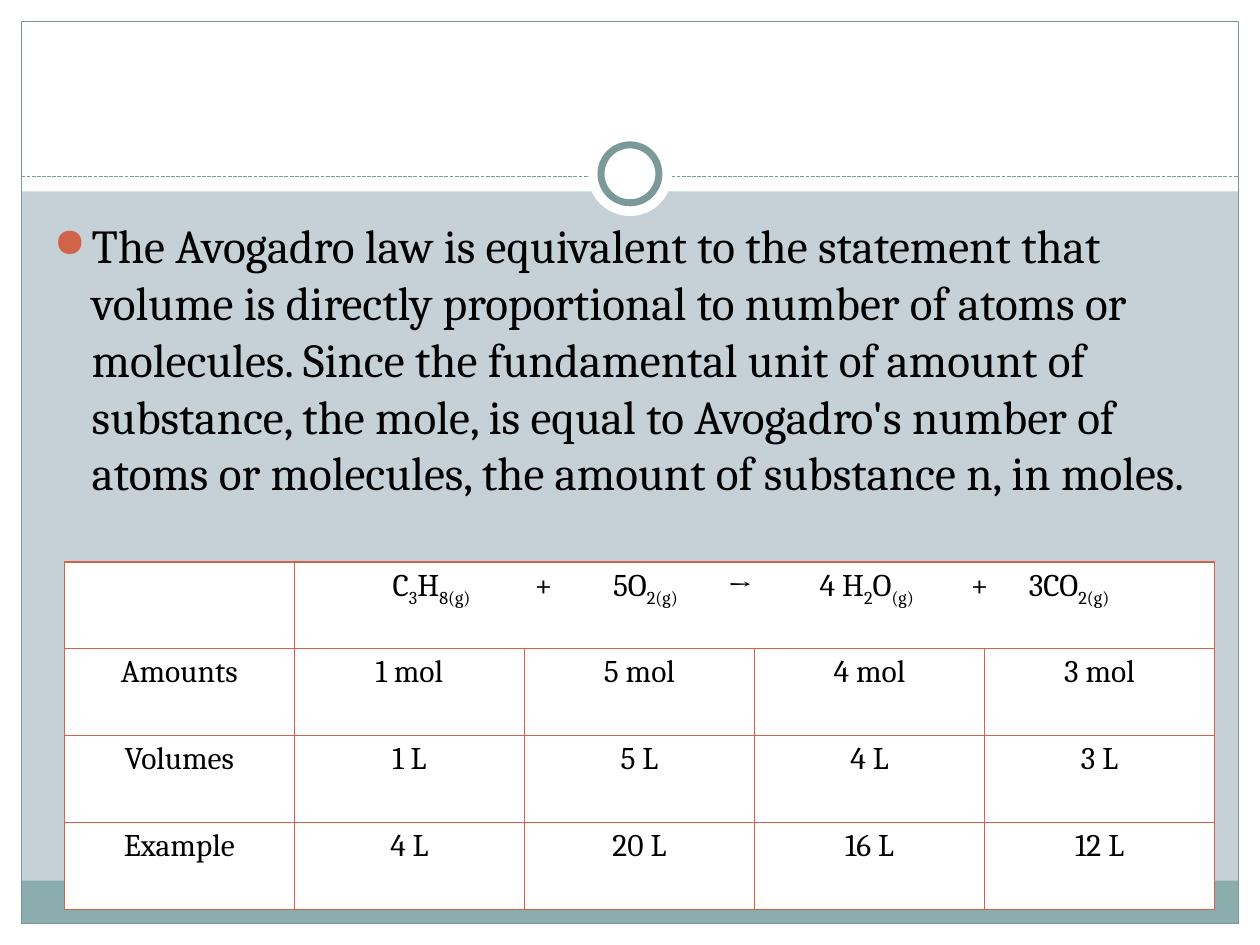
from dataclasses import dataclass

from lxml import etree
from pptx import Presentation
from pptx.dml.color import RGBColor
from pptx.enum.dml import MSO_LINE
from pptx.enum.shapes import MSO_CONNECTOR, MSO_SHAPE
from pptx.enum.text import PP_ALIGN
from pptx.oxml.ns import qn
from pptx.util import Inches, Pt

RECT, OVAL = MSO_SHAPE.RECTANGLE, MSO_SHAPE.OVAL
STRAIGHT = MSO_CONNECTOR.STRAIGHT
DASH = MSO_LINE.SQUARE_DOT
CENTER, LEFT = PP_ALIGN.CENTER, PP_ALIGN.LEFT


@dataclass(frozen=True)
class Theme:
    background: str = "C5D1D7"
    paper: str = "FFFFFF"
    band: str = "8CADAE"
    frame: str = "7C999A"
    accent: str = "D16349"
    ink: str = "000000"
    font: str = "Cambria"
    body_size: int = 27
    table_size: int = 18
    hairline: float = 0.75
    ring_line: float = 4


THEME = Theme()

STATEMENT = (
    "The Avogadro law is equivalent to the statement that volume is directly "
    "proportional to number of atoms or molecules. Since the fundamental unit "
    "of amount of substance, the mole, is equal to Avogadro's number of atoms "
    "or molecules, the amount of substance n, in moles."
)
# Each term: tab stop in inches, then alternating normal and subscript text
EQUATION = [
    (0.71, ["C", "3", "H", "8(g)"]),
    (1.84, ["+"]),
    (2.46, ["5O", "2(g)"]),
    (3.37, ["→"]),
    (4.10, ["4 H", "2", "O", "(g)"]),
    (5.30, ["+"]),
    (5.76, ["3CO", "2(g)"]),
]
QUANTITIES = [
    ["Amounts", "1 mol", "5 mol", "4 mol", "3 mol"],
    ["Volumes", "1 L", "5 L", "4 L", "3 L"],
    ["Example", "4 L", "20 L", "16 L", "12 L"],
]


def color(value):
    return RGBColor.from_string(value)


def add_plain(slide, kind, box, fill=None, line=None, weight=THEME.hairline):
    shape = slide.shapes.add_shape(kind, *map(Inches, box))
    shape.shadow.inherit = False
    if fill:
        shape.fill.solid()
        shape.fill.fore_color.rgb = color(fill)
    else:
        shape.fill.background()
    if line:
        shape.line.color.rgb = color(line)
        shape.line.width = Pt(weight)
    else:
        shape.line.fill.background()


def set_font(paragraph, size):
    font = paragraph.font
    font.name, font.size = THEME.font, Pt(size)
    font.color.rgb = color(THEME.ink)


def add_backdrop(slide, box):
    left, top, width, height = box
    margin, header = 0.17, 1.52
    right, bottom = left + width, top + height
    slide.background.fill.solid()
    slide.background.fill.fore_color.rgb = color(THEME.background)

    # White header and margins
    for edge in [
        (left, bottom - margin, width, margin),
        (left, top, width, header),
        (left, top, margin, height),
        (right - margin, top, margin, height),
    ]:
        add_plain(slide, RECT, edge, THEME.paper)

    # Footer band and frame
    inner = width - 2 * margin
    add_plain(slide, RECT, (left + margin, 6.99, inner, 0.34), THEME.band)
    add_plain(slide, RECT, (left + margin, top + margin, inner, height - 2 * margin),
              line=THEME.frame)

    # Dashed divider
    divider = slide.shapes.add_connector(
        STRAIGHT, Inches(left + margin), Inches(1.4), Inches(right - margin), Inches(1.4))
    divider.line.color.rgb = color(THEME.frame)
    divider.line.width = Pt(THEME.hairline)
    divider.line.dash_style = DASH
    etree.SubElement(divider.element.spPr, qn("a:effectLst"))

    # Ring with a white halo
    center_x, center_y = left + width / 2, 1.38
    for diameter, line in [(0.67, None), (0.46, THEME.frame)]:
        ring = (center_x - diameter / 2, center_y - diameter / 2, diameter, diameter)
        add_plain(slide, OVAL, ring, THEME.paper, line, THEME.ring_line)


def add_statement(slide, box):
    frame = slide.shapes.add_textbox(*map(Inches, box)).text_frame
    frame.word_wrap = True
    statement = frame.paragraphs[0]
    statement.text = STATEMENT
    statement.space_before = Pt(0.2 * THEME.body_size)
    set_font(statement, THEME.body_size)

    # Bullet goes ahead of the default run properties
    props = statement._p.get_or_add_pPr()
    props.set("marL", str(Inches(0.3)))
    props.set("indent", str(-Inches(0.3)))
    bullet_color = etree.Element(qn("a:buClr"))
    etree.SubElement(bullet_color, qn("a:srgbClr"), val=THEME.accent)
    bullet_size = etree.Element(qn("a:buSzPct"), val="85000")
    bullet = etree.Element(qn("a:buChar"), char="●")
    defaults = props.find(qn("a:defRPr"))
    for part in (bullet_color, bullet_size, bullet):
        defaults.addprevious(part)


def style_cell(cell):
    cell.margin_left = cell.margin_right = Inches(0.07)
    cell.margin_top = cell.margin_bottom = 0
    props = cell._tc.get_or_add_tcPr()
    for side in ("a:lnL", "a:lnR", "a:lnT", "a:lnB"):
        border = etree.SubElement(props, qn(side), w=str(Pt(THEME.hairline)))
        fill = etree.SubElement(border, qn("a:solidFill"))
        etree.SubElement(fill, qn("a:srgbClr"), val=THEME.accent)
    cell.fill.solid()
    cell.fill.fore_color.rgb = color(THEME.paper)
    paragraph = cell.text_frame.paragraphs[0]
    paragraph.alignment = CENTER
    paragraph.line_spacing = 1.15
    set_font(paragraph, THEME.table_size)


def write_equation(paragraph):
    paragraph.alignment = LEFT
    tabs = etree.Element(qn("a:tabLst"))
    for stop, parts in EQUATION:
        etree.SubElement(tabs, qn("a:tab"), pos=str(Inches(stop)), algn="l")
        for index, part in enumerate(parts):
            run = paragraph.add_run()
            run.text = part if index else "\t" + part
            if index % 2:
                run.font._element.set("baseline", "-25000")
    paragraph._p.get_or_add_pPr().find(qn("a:defRPr")).addprevious(tabs)


def add_quantities(slide, box):
    rows, columns = len(QUANTITIES) + 1, len(QUANTITIES[0])
    left, top, width, height = map(Inches, box)
    table = slide.shapes.add_table(rows, columns, left, top, width, height).table
    table.first_row = table.horz_banding = False
    for cell in table.iter_cells():
        style_cell(cell)

    # Reaction across the four substance columns
    reaction = table.cell(0, 1)
    reaction.merge(table.cell(0, columns - 1))
    write_equation(reaction.text_frame.paragraphs[0])

    for row, values in enumerate(QUANTITIES, start=1):
        for column, value in enumerate(values):
            table.cell(row, column).text_frame.paragraphs[0].add_run().text = value


def main():
    deck = Presentation()
    deck.slide_width, deck.slide_height = Inches(10), Inches(7.5)
    slide = deck.slides.add_slide(deck.slide_layouts[6])
    add_backdrop(slide, (0, 0, 10, 7.5))
    add_statement(slide, (0.33, 1.67, 9.3, 5))
    add_quantities(slide, (0.51, 4.46, 9.13, 2.76))
    deck.save("out.pptx")


if __name__ == "__main__":
    main()
